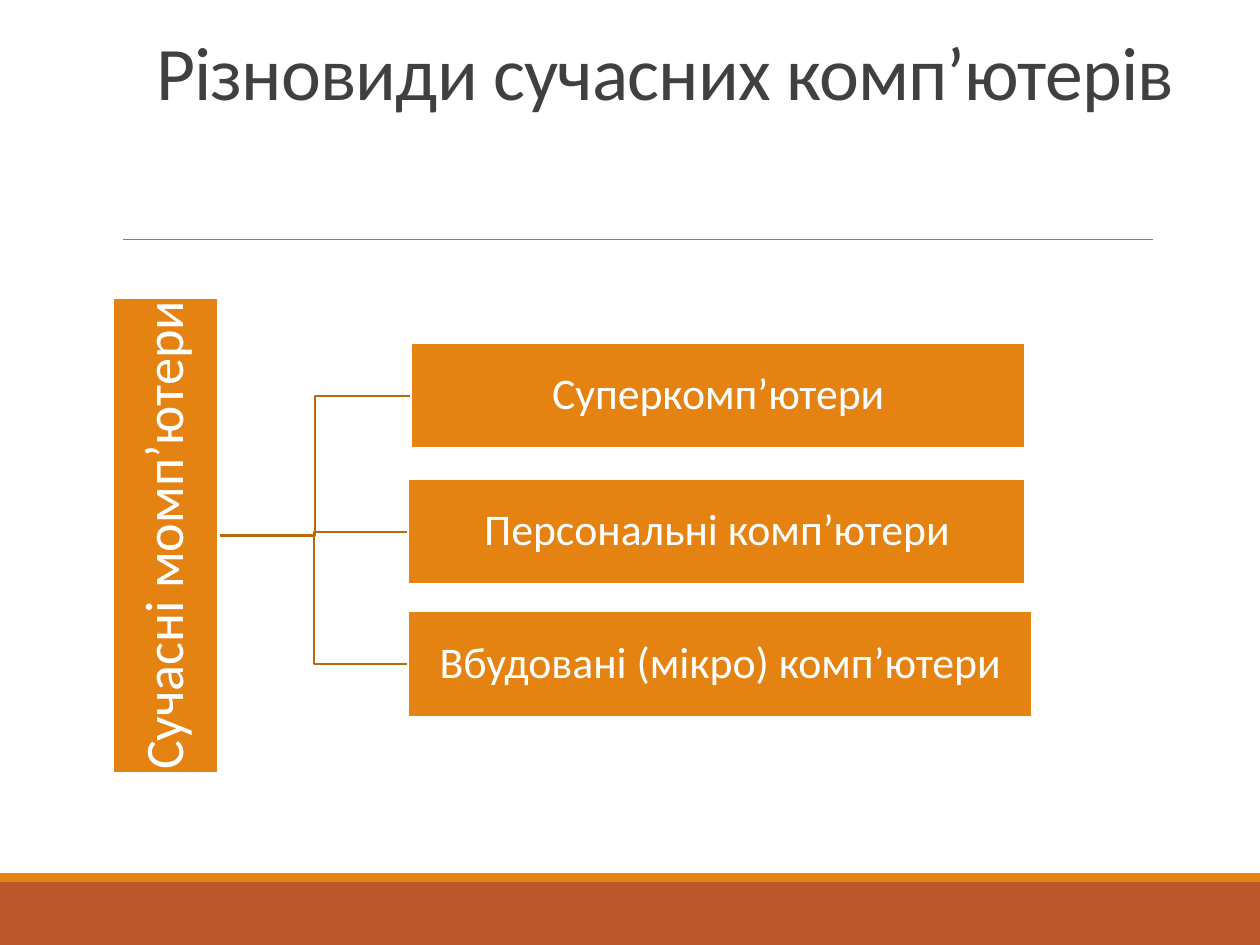
from typing import NamedTuple

from lxml.etree import SubElement
from pptx import Presentation
from pptx.dml.color import RGBColor
from pptx.enum.shapes import MSO_CONNECTOR as Link, MSO_SHAPE as Kind
from pptx.enum.text import MSO_ANCHOR as Anchor, MSO_AUTO_SIZE as Fit, PP_ALIGN as Align
from pptx.oxml.ns import qn
from pptx.util import Inches, Pt

ORANGE = RGBColor(0xE4, 0x83, 0x12)
RUST = RGBColor(0xBD, 0x58, 0x2C)
BROWN = RGBColor(0xB7, 0x69, 0x0E)
GRAY = RGBColor(0x80, 0x80, 0x80)
DARK = RGBColor(0x40, 0x40, 0x40)
WHITE = RGBColor(0xFF, 0xFF, 0xFF)
FONT = "Calibri"
HIGH = 0.84


class Box(NamedTuple):
    text: str
    left: float
    top: float
    width: float
    size: float = 25
    turn: float = 0

    @property
    def mid(self) -> float:
        return self.top + HIGH / 2


ROOT = Box("Сучасні момп’ютери", -0.57, 3.83, 3.77, 31, 270)
ROOT_EDGE = 1.74
KINDS = [
    Box("Суперкомп’ютери", 3.26, 2.72, 4.88),
    Box("Персональні комп’ютери", 3.24, 3.8, 4.9),
    Box("Вбудовані (мікро) комп’ютери", 3.24, 4.85, 4.95),
]


def add_rect(slide, left: float, top: float, width: float, high: float, fill: RGBColor):
    rect = slide.shapes.add_shape(
        Kind.RECTANGLE, Inches(left), Inches(top), Inches(width), Inches(high))
    rect.shadow.inherit = False
    rect.fill.solid()
    rect.fill.fore_color.rgb = fill
    rect.line.fill.background()
    return rect


def add_rule(slide, left: float, right: float, y: float) -> None:
    rule = slide.shapes.add_connector(
        Link.STRAIGHT, Inches(left), Inches(y), Inches(right), Inches(y))
    rule.line.color.rgb = GRAY
    rule.line.width = Pt(0.5)
    SubElement(rule._element.spPr, qn("a:effectLst"))


def add_title(slide, text: str) -> None:
    title = slide.shapes.title
    title.left, title.top = Inches(1.14), Inches(0)
    title.width, title.height = Inches(8.86), Inches(0.97)
    frame = title.text_frame
    frame.text = text
    frame.auto_size = Fit.NONE
    frame.vertical_anchor = Anchor.BOTTOM
    para = frame.paragraphs[0]
    para.alignment = Align.LEFT
    para.line_spacing = 0.85
    run = para.runs[0]
    run.font.name, run.font.size = FONT, Pt(43.2)
    run.font.color.rgb = DARK
    run.font._element.set("spc", "-50")


def add_branch(slide, box: Box) -> None:
    """Draw the elbow line from the root to a box."""
    bend = (ROOT_EDGE + box.left) / 2
    spots = [(ROOT_EDGE, ROOT.mid), (bend, ROOT.mid), (bend, box.mid), (box.left, box.mid)]
    start, *rest = [(Inches(x), Inches(y)) for x, y in spots]
    pen = slide.shapes.build_freeform(*start)
    pen.add_line_segments(rest, close=False)
    branch = pen.convert_to_shape()
    branch.shadow.inherit = False
    branch.fill.background()
    branch.line.color.rgb = BROWN
    branch.line.width = Pt(1.25)


def add_box(slide, box: Box) -> None:
    rect = add_rect(slide, box.left, box.top, box.width, HIGH, ORANGE)
    rect.rotation = box.turn
    rect.line.color.rgb = WHITE
    rect.line.width = Pt(1.25)
    frame = rect.text_frame
    frame.word_wrap = True
    frame.vertical_anchor = Anchor.MIDDLE
    frame.margin_left = frame.margin_right = Inches(0.02)
    frame.margin_top = frame.margin_bottom = Inches(0.02)
    frame.text = box.text
    para = frame.paragraphs[0]
    para.alignment = Align.CENTER
    para.line_spacing = 0.9
    para.font.name, para.font.size = FONT, Pt(box.size)
    para.font.color.rgb = WHITE


def main() -> None:
    deck = Presentation()
    deck.slide_width, deck.slide_height = Inches(10), Inches(7.5)
    slide = deck.slides.add_slide(deck.slide_layouts[5])
    add_rect(slide, 0, 7, 10, 0.5, RUST)
    add_rect(slide, 0, 6.93, 10, 0.07, ORANGE)
    add_rule(slide, 0.98, 9.15, 1.9)
    add_title(slide, "Різновиди сучасних комп’ютерів")
    for box in reversed(KINDS):
        add_branch(slide, box)
    for box in [ROOT, *KINDS]:
        add_box(slide, box)
    deck.save("out.pptx")


if __name__ == "__main__":
    main()
